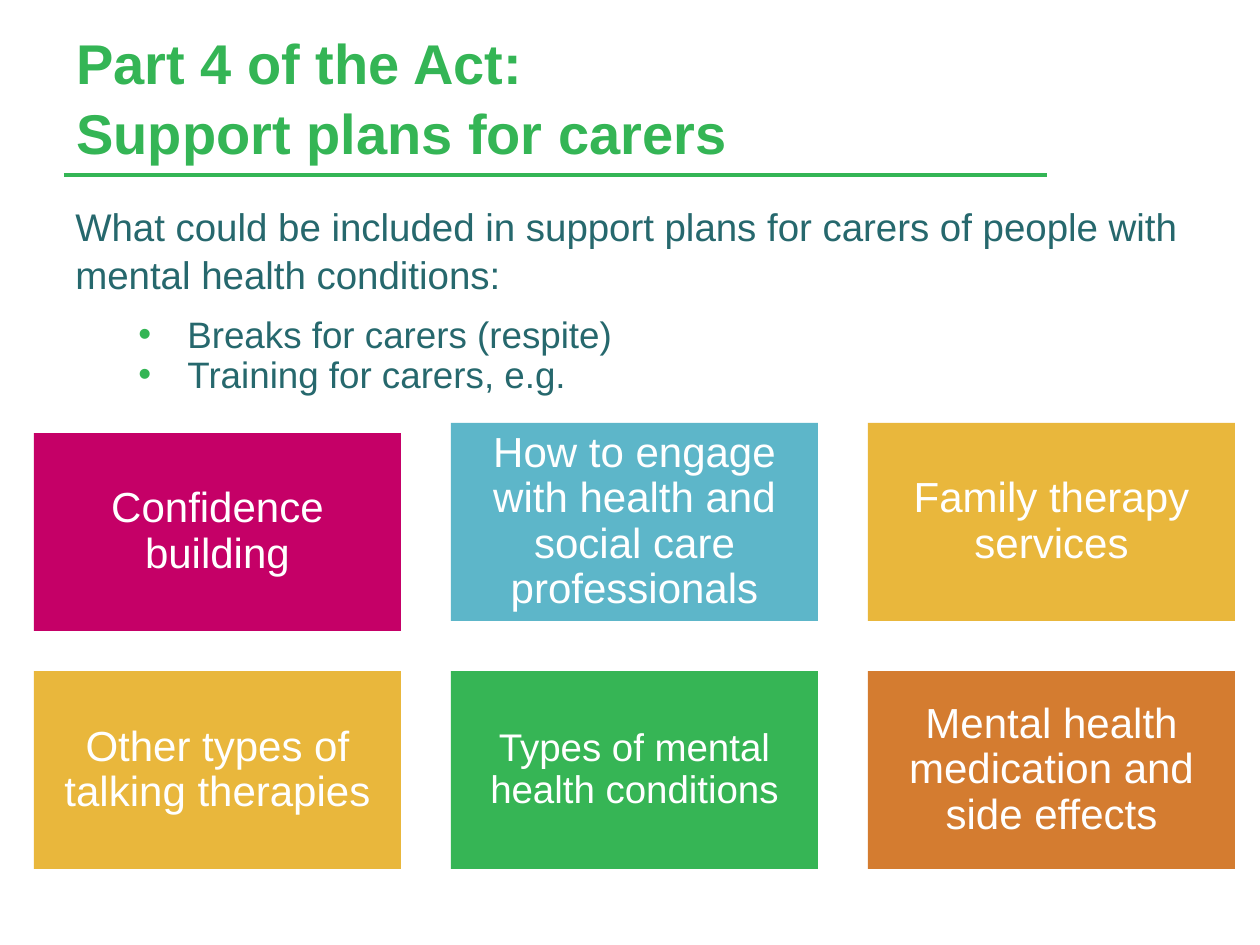
from typing import NamedTuple

from lxml import etree
from pptx import Presentation
from pptx import util as u
from pptx.dml.color import RGBColor
from pptx.enum import shapes, text
from pptx.oxml import ns

EMU_PER_PX = 914400 / 126
COLORS = {
    "green": "34B555",
    "card_green": "36B555",
    "teal": "26686D",
    "magenta": "C50067",
    "blue": "5DB6C9",
    "yellow": "E9B73C",
    "orange": "D47C30",
    "white": "FFFFFF",
}
CARD_LEFT, CARD_TOP = 34, 423
CARD_WIDTH, CARD_HEIGHT = 367, 198
COLUMN_STEP, ROW_STEP = 417, 248


class Box(NamedTuple):
    left: int
    top: int
    width: int
    height: int


class Card(NamedTuple):
    label: str
    color: str
    column: int
    row: int
    size: int = 24
    drop: int = 0


class BulletItem(NamedTuple):
    label: str
    box: Box


CARDS = [
    Card("Confidence building", "magenta", 0, 0, drop=10),
    Card("How to engage with health and social care professionals", "blue", 1, 0),
    Card("Family therapy services", "yellow", 2, 0),
    Card("Other types of talking therapies", "yellow", 0, 1),
    Card("Types of mental health conditions", "card_green", 1, 1, size=22),
    Card("Mental health medication and side effects", "orange", 2, 1),
]
BULLET_ITEMS = [
    BulletItem("Breaks for carers (respite)", Box(64, 304, 605, 106)),
    BulletItem("Training for carers, e.g.", Box(64, 344, 536, 96)),
]


def px(length: int) -> int:
    return round(length * EMU_PER_PX)


def color(name: str) -> RGBColor:
    return RGBColor.from_string(COLORS[name])


def write(shape, content: str, *, size: int, fill: str = "teal", bold: bool = False,
          anchor=text.MSO_ANCHOR.TOP, align=text.PP_ALIGN.LEFT,
          spacing: float = 1.04, bullet: bool = False) -> None:
    """Put one formatted paragraph in the shape; a vertical tab breaks the line."""
    frame = shape.text_frame
    frame.word_wrap = True
    frame.vertical_anchor = anchor
    paragraph = frame.paragraphs[0]
    paragraph.text = content
    paragraph.alignment = align
    paragraph.line_spacing = spacing
    if bullet:
        add_bullet(paragraph)
    for run in paragraph.runs:
        run.font.name = "Arial"
        run.font.size = u.Pt(size)
        run.font.bold = bold
        run.font.color.rgb = color(fill)


def add_bullet(paragraph) -> None:
    properties = paragraph._p.get_or_add_pPr()
    properties.set("marL", str(px(111)))
    properties.set("indent", str(px(-49)))
    bullet_color = etree.SubElement(properties, ns.qn("a:buClr"))
    etree.SubElement(bullet_color, ns.qn("a:srgbClr"), val=COLORS["green"])
    etree.SubElement(properties, ns.qn("a:buFont"), typeface="Arial")
    etree.SubElement(properties, ns.qn("a:buChar"), char="•")


def add_text(slide, box: Box, content: str, **formatting) -> None:
    write(slide.shapes.add_textbox(*map(px, box)), content, **formatting)


def add_title_rule(slide) -> None:
    rule = slide.shapes.add_connector(
        shapes.MSO_CONNECTOR.STRAIGHT, px(64), px(175), px(1047), px(175))
    rule.line.color.rgb = color("green")
    rule.line.width = u.Pt(2)
    etree.SubElement(rule._element.spPr, ns.qn("a:effectLst"))


def add_card(slide, card: Card) -> None:
    box = Box(CARD_LEFT + card.column * COLUMN_STEP,
              CARD_TOP + card.row * ROW_STEP + card.drop, CARD_WIDTH, CARD_HEIGHT)
    shape = slide.shapes.add_shape(shapes.MSO_SHAPE.RECTANGLE, *map(px, box))
    shape.shadow.inherit = False
    shape.fill.solid()
    shape.fill.fore_color.rgb = color(card.color)
    shape.line.fill.background()
    frame = shape.text_frame
    frame.margin_left = frame.margin_right = px(13)
    frame.margin_top = frame.margin_bottom = px(13)
    write(shape, card.label, size=card.size, fill="white", spacing=0.9,
          anchor=text.MSO_ANCHOR.MIDDLE, align=text.PP_ALIGN.CENTER)


def main() -> None:
    presentation = Presentation()
    presentation.slide_width, presentation.slide_height = px(1260), px(945)
    slide = presentation.slides.add_slide(presentation.slide_layouts[6])
    add_title_rule(slide)
    add_text(slide, Box(64, 35, 983, 137), "Part 4 of the Act:\vSupport plans for carers",
             size=32, fill="green", bold=True, anchor=text.MSO_ANCHOR.BOTTOM)
    add_text(slide, Box(63, 195, 1134, 118),
             "What could be included in support plans for carers of people with "
             "mental health conditions:", size=22)
    for item in BULLET_ITEMS:
        add_text(slide, item.box, item.label, size=21, bullet=True)
    for card in CARDS:
        add_card(slide, card)
    presentation.save("out.pptx")


if __name__ == "__main__":
    main()
